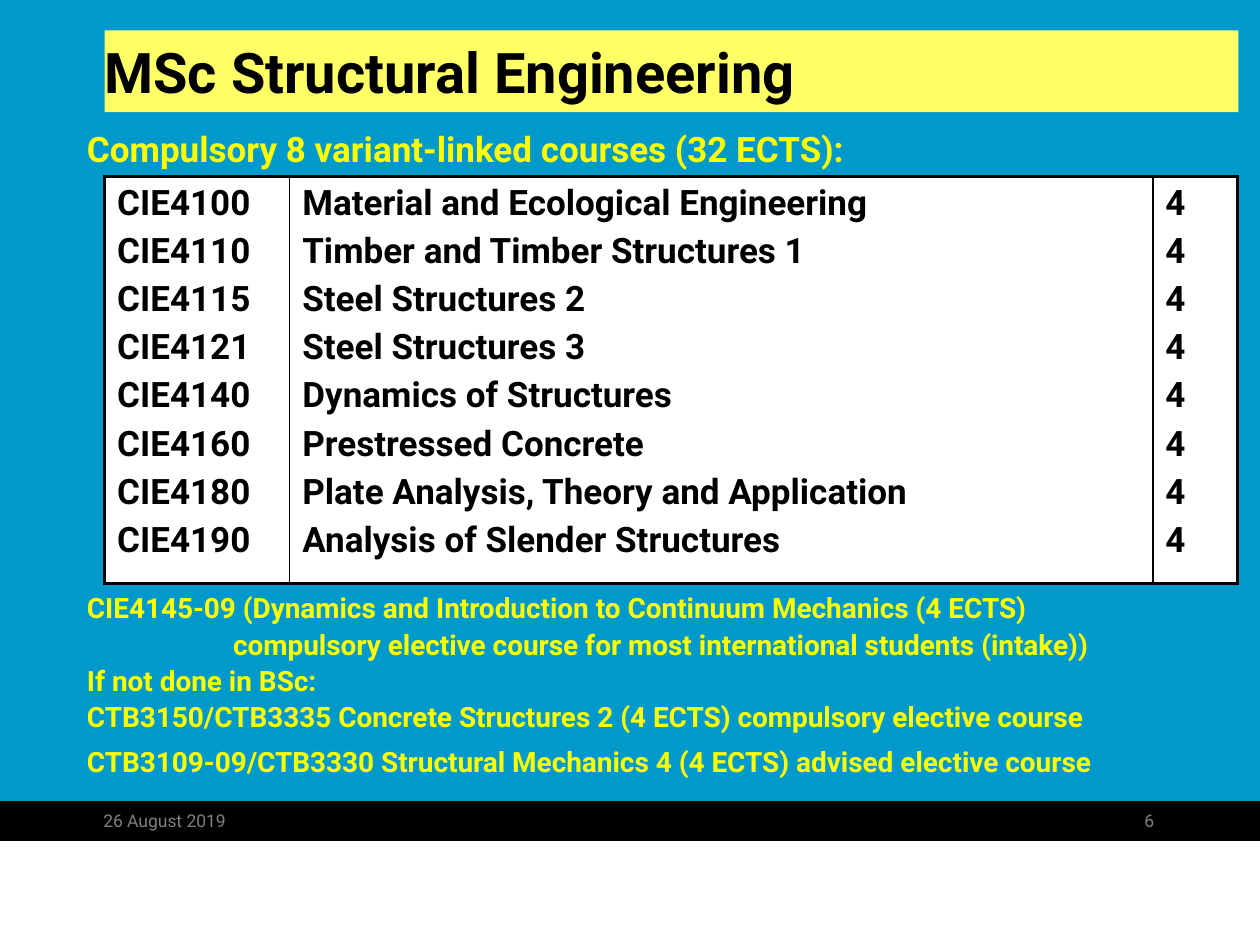
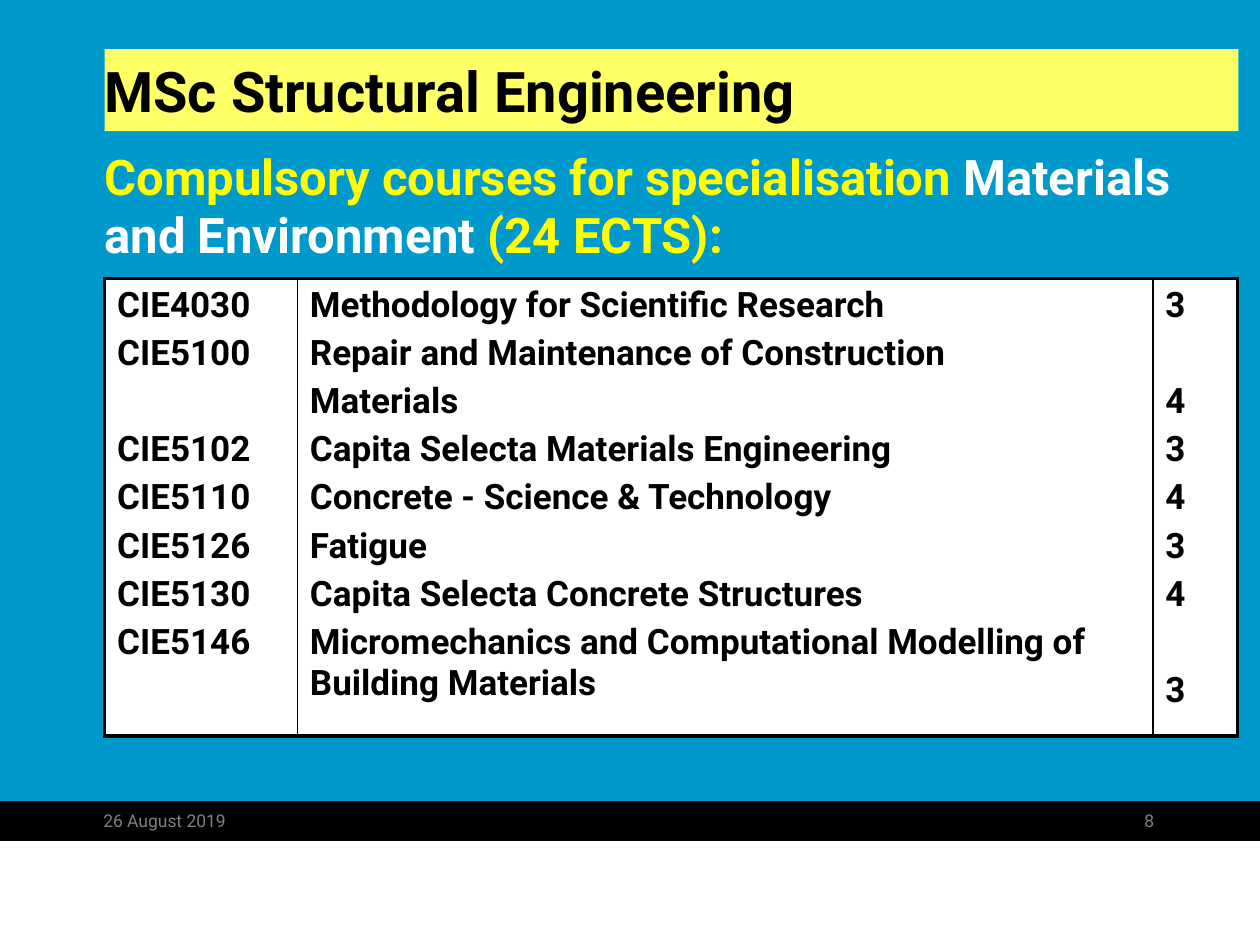
import pptx
import pptx.util
import pptx.dml.color
import pptx.enum.shapes
import pptx.enum.text
import pptx.oxml
import pptx.oxml.ns

Inches = pptx.util.Inches
Pt = pptx.util.Pt
ALIGN = pptx.enum.text.PP_ALIGN
ANCHOR = pptx.enum.text.MSO_ANCHOR

FONT = "Roboto"
COLORS = {
    "sky": "0099CC",
    "band": "FFFF66",
    "note": "FFFF00",
    "ink": "000000",
    "paper": "FFFFFF",
    "foot": "808080",
}
LEFT = 0.83
CREDIT = 0.67
THICK, THIN = 2.25, 1
SIZE = 20
GAP = 4
STEP = 27.5


def color(name):
    return pptx.dml.color.RGBColor.from_string(COLORS[name])


def write(frame, lines, size=SIZE, tint="ink", bold=True, align=ALIGN.LEFT,
          gap=0, step=0, indents=None, gaps=None):
    """Each line is a string, a list of (text, tint) runs, or None for a skipped row."""
    frame.word_wrap = True
    skip = 0
    first = True
    for index, line in enumerate(lines):
        if line is None:
            skip += step
            continue
        para = frame.paragraphs[0] if first else frame.add_paragraph()
        para.alignment = align
        space = (gaps or {}).get(index, gap) + skip
        para.space_before = Pt(0 if first else space)
        if indents and index in indents:
            props = para._p.get_or_add_pPr()
            props.set("marL", str(Inches(indents[index])))
            props.set("indent", "0")
        runs = [(line, tint)] if isinstance(line, str) else line
        for words, shade in runs:
            run = para.add_run()
            run.text = words
            run.font.name = FONT
            run.font.size = Pt(size)
            run.font.bold = bold
            run.font.color.rgb = color(shade)
        first = False
        skip = 0


def inset(frame):
    frame.margin_left = frame.margin_right = 0
    frame.margin_top = frame.margin_bottom = Inches(0.05)


def label(slide, box, lines, **style):
    frame = slide.shapes.add_textbox(*map(Inches, box)).text_frame
    inset(frame)
    write(frame, lines, **style)


def block(slide, box, fill, line=None):
    kind = pptx.enum.shapes.MSO_SHAPE.RECTANGLE
    shape = slide.shapes.add_shape(kind, *map(Inches, box))
    shape.shadow.inherit = False
    shape.fill.solid()
    shape.fill.fore_color.rgb = color(fill)
    if line:
        shape.line.color.rgb = color(line)
        shape.line.width = Pt(0.75)
    else:
        shape.line.fill.background()
    return shape


def title(slide, top):
    frame = block(slide, (LEFT, top, 9, 0.65), "band").text_frame
    inset(frame)
    frame.vertical_anchor = ANCHOR.MIDDLE
    write(frame, ["MSc Structural Engineering"], size=32)


def footer(slide, number):
    block(slide, (0, 6.67, 10, 0.83), "paper")
    block(slide, (0, 6.36, 10, 0.31), "ink", line="ink")
    style = dict(size=10, tint="foot", bold=False)
    label(slide, (0.82, 6.38, 2.08, 0.33), ["26 August 2019"], **style)
    label(slide, (7.08, 6.38, 2.08, 0.25), [str(number)], align=ALIGN.RIGHT, **style)


def border(cell, side, width):
    props = cell._tc.get_or_add_tcPr()
    props.append(pptx.oxml.parse_xml(
        f'<a:ln{side} {pptx.oxml.ns.nsdecls("a")} w="{Pt(width)}"><a:solidFill>'
        f'<a:srgbClr val="{COLORS["ink"]}"/></a:solidFill></a:ln{side}>'))


def courses(slide, top, height, code, columns):
    total = 8.99
    widths = [code, total - code - CREDIT, CREDIT]
    box = map(Inches, (LEFT, top, total, height))
    table = slide.shapes.add_table(1, len(widths), *box).table
    table.first_row = table.horz_banding = False
    last = len(widths) - 1
    for index, (width, lines) in enumerate(zip(widths, columns)):
        table.columns[index].width = Inches(width)
        cell = table.cell(0, index)
        border(cell, "L", THIN if index else THICK)
        border(cell, "R", THIN if index < last else THICK)
        border(cell, "T", THICK)
        border(cell, "B", THICK)
        cell.fill.solid()
        cell.fill.fore_color.rgb = color("paper")
        write(cell.text_frame, lines, gap=GAP, step=STEP)


def start(deck, top, number):
    slide = deck.slides.add_slide(deck.slide_layouts[6])
    footer(slide, number)
    title(slide, top)
    return slide


def variant(deck):
    slide = start(deck, 0.24, 6)
    label(slide, (0.69, 0.96, 9.08, 0.43),
          ["Compulsory 8 variant-linked courses (32 ECTS):"], tint="note")
    rows = [
        ("CIE4100", "Material and Ecological Engineering", "4"),
        ("CIE4110", "Timber and Timber Structures 1", "4"),
        ("CIE4115", "Steel Structures 2", "4"),
        ("CIE4121", "Steel Structures 3", "4"),
        ("CIE4140", "Dynamics of Structures", "4"),
        ("CIE4160", "Prestressed Concrete", "4"),
        ("CIE4180", "Plate Analysis, Theory and Application", "4"),
        ("CIE4190", "Analysis of Slender Structures", "4"),
    ]
    courses(slide, 1.4, 3.23, 1.47, zip(*rows))
    notes = [
        "CIE4145-09 (Dynamics and Introduction to Continuum Mechanics (4 ECTS)",
        "compulsory elective course for most international students (intake))",
        "If not done in BSc:",
        "CTB3150/CTB3335 Concrete Structures 2 (4 ECTS) compulsory elective course",
        "CTB3109-09/CTB3330 Structural Mechanics 4 (4 ECTS) advised elective course",
    ]
    label(slide, (0.69, 4.64, 9.08, 1.6), notes, size=16, tint="note",
          gap=1.5, indents={1: 1.16}, gaps={4: 6.4})


def special(deck):
    slide = start(deck, 0.39, 8)
    head = [
        ("Compulsory courses for specialisation ", "note"),
        ("Materials and Environment", "paper"),
        (" (24 ECTS):", "note"),
    ]
    label(slide, (LEFT, 1.11, 8.94, 1.05), [head], size=28)
    rows = [
        ("CIE4030", "Methodology for Scientific Research", "3"),
        ("CIE5100", "Repair and Maintenance of Construction", None),
        (None, "Materials", "4"),
        ("CIE5102", "Capita Selecta Materials Engineering", "3"),
        ("CIE5110", "Concrete - Science & Technology", "4"),
        ("CIE5126", "Fatigue", "3"),
        ("CIE5130", "Capita Selecta Concrete Structures", "4"),
        ("CIE5146", "Micromechanics and Computational Modelling of Building Materials", None),
        (None, None, "3"),
    ]
    courses(slide, 2.21, 3.63, 1.53, zip(*rows))


def main():
    deck = pptx.Presentation()
    deck.slide_width, deck.slide_height = Inches(10), Inches(7.5)
    fill = deck.slide_master.background.fill
    fill.solid()
    fill.fore_color.rgb = color("sky")
    variant(deck)
    special(deck)
    deck.save("out.pptx")


if __name__ == "__main__":
    main()
